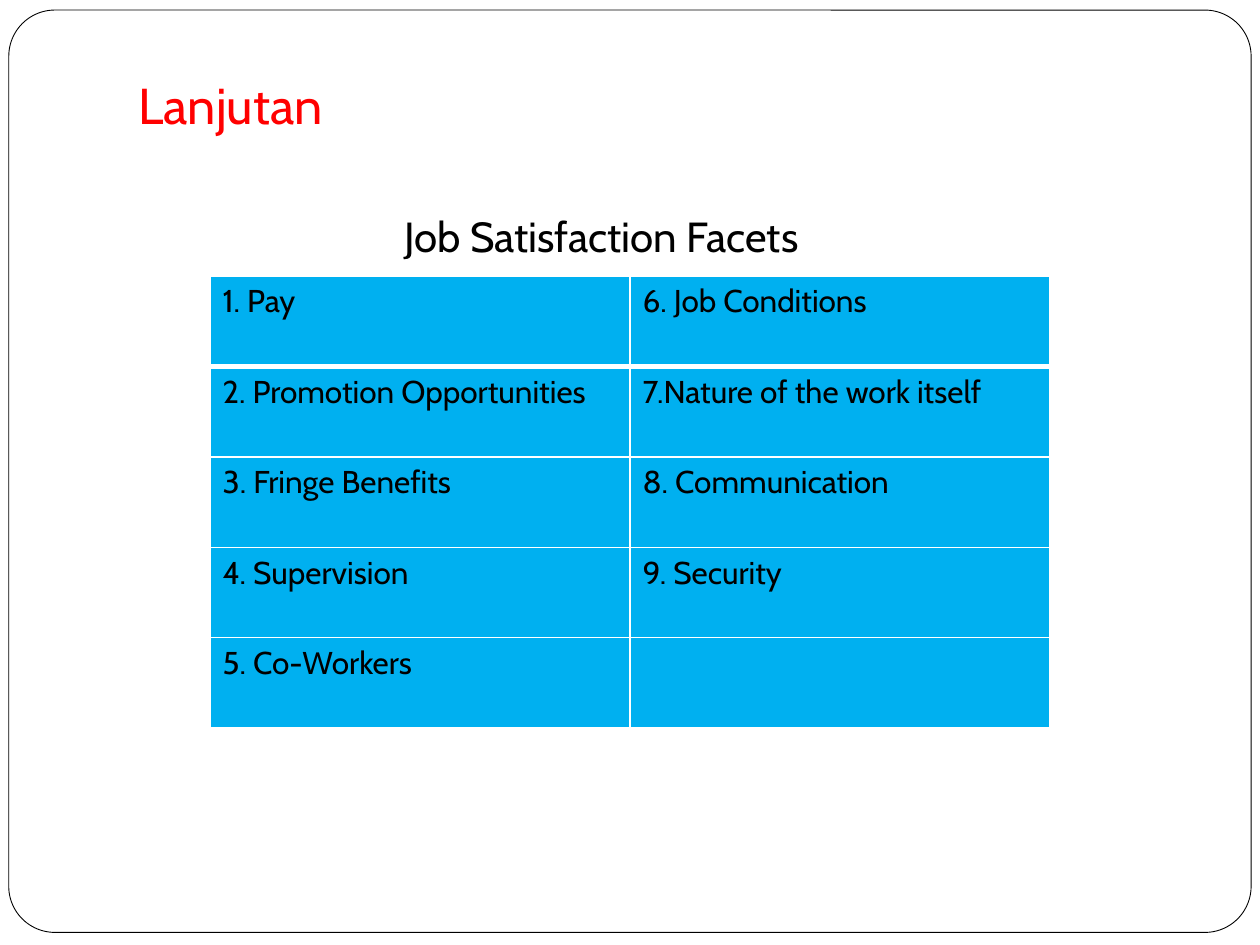
from dataclasses import dataclass

from pptx import Presentation
from pptx.dml.color import RGBColor
from pptx.enum.shapes import MSO_SHAPE as Shape
from pptx.enum.text import MSO_ANCHOR as Anchor, PP_ALIGN as Align
from pptx.oxml import parse_xml
from pptx.oxml.ns import nsdecls
from pptx.util import Pt


@dataclass(frozen=True)
class Theme:
    """Colours, font and type sizes of the slide."""
    font: str = "Cabin"
    red: str = "FF0000"
    black: str = "000000"
    white: str = "FFFFFF"
    blue: str = "00B0F0"
    title: float = 28.8
    heading: float = 24
    cell: float = 18


THEME = Theme()
FACETS = [
    ("1. Pay", "6. Job Conditions"),
    ("2. Promotion Opportunities", "7.Nature of the work itself"),
    ("3. Fringe Benefits", "8. Communication"),
    ("4. Supervision", "9. Security"),
    ("5. Co-Workers", ""),
]


def apply(target, formats):
    """Set every attribute named in formats on the target."""
    for name, value in formats.items():
        setattr(target, name, value)


def write(text_frame, text, size, color):
    """Put one left-aligned paragraph in the text frame."""
    paragraph = text_frame.paragraphs[0]
    paragraph.text = text
    paragraph.alignment = Align.LEFT
    apply(paragraph.font, {"name": THEME.font, "size": Pt(size), "bold": False})
    paragraph.font.color.rgb = RGBColor.from_string(color)


def add_title(slide, text):
    """Place and format the title placeholder."""
    title = slide.shapes.title
    apply(title, {"left": Pt(72), "top": Pt(50.4), "width": Pt(612), "height": Pt(33.84)})
    apply(title.text_frame, {"vertical_anchor": Anchor.BOTTOM, "word_wrap": True,
                             "margin_left": Pt(7.2), "margin_right": Pt(7.2),
                             "margin_top": Pt(3.6), "margin_bottom": Pt(7.2)})
    write(title.text_frame, text, THEME.title, THEME.red)


def add_frame(slide):
    """Draw the rounded page frame behind the title."""
    frame = slide.shapes.add_shape(
        Shape.ROUNDED_RECTANGLE, Pt(5.04), Pt(5.76), Pt(709.92), Pt(527.04))
    frame.adjustments[0] = 0.05
    frame.shadow.inherit = False
    frame.fill.solid()
    frame.fill.fore_color.rgb = RGBColor.from_string(THEME.white)
    frame.line.color.rgb = RGBColor.from_string(THEME.black)
    frame.line.width = Pt(0.5)
    slide.shapes.title.element.addprevious(frame.element)


def add_heading(slide, text):
    """Add the heading above the table."""
    box = slide.shapes.add_textbox(Pt(72), Pt(113.76), Pt(612), Pt(360))
    apply(box.text_frame, {"word_wrap": True, "margin_left": Pt(159), "margin_top": Pt(6.5)})
    write(box.text_frame, text, THEME.heading, THEME.black)


def set_borders(cell, top, bottom):
    """Give the cell white borders, with its own top and bottom widths."""
    widths = {"lnL": 1, "lnR": 1, "lnT": top, "lnB": bottom}
    properties = cell._tc.get_or_add_tcPr()
    for index, (side, width) in enumerate(widths.items()):
        properties.insert(index, parse_xml(
            f'<a:{side} {nsdecls("a")} w="{Pt(width)}"><a:solidFill>'
            f'<a:srgbClr val="{THEME.white}"/></a:solidFill></a:{side}>'))


def add_facets(slide, rows):
    """Add the table of facets with a thick rule under the first row."""
    table = slide.shapes.add_table(
        len(rows), len(rows[0]), Pt(120), Pt(157.68), Pt(480), Pt(258.5)).table
    for row_index, row in enumerate(rows):
        for column_index, text in enumerate(row):
            cell = table.cell(row_index, column_index)
            cell.fill.solid()
            cell.fill.fore_color.rgb = RGBColor.from_string(THEME.blue)
            set_borders(cell, 3 if row_index == 1 else 1, 3 if row_index == 0 else 1)
            write(cell.text_frame, text, THEME.cell, THEME.black)


def main():
    """Build and save the slide."""
    presentation = Presentation()
    apply(presentation, {"slide_width": Pt(720), "slide_height": Pt(540)})
    slide = presentation.slides.add_slide(presentation.slide_layouts[5])
    add_title(slide, "Lanjutan")
    add_frame(slide)
    add_heading(slide, "Job Satisfaction Facets")
    add_facets(slide, FACETS)
    presentation.save("out.pptx")


if __name__ == "__main__":
    main()
